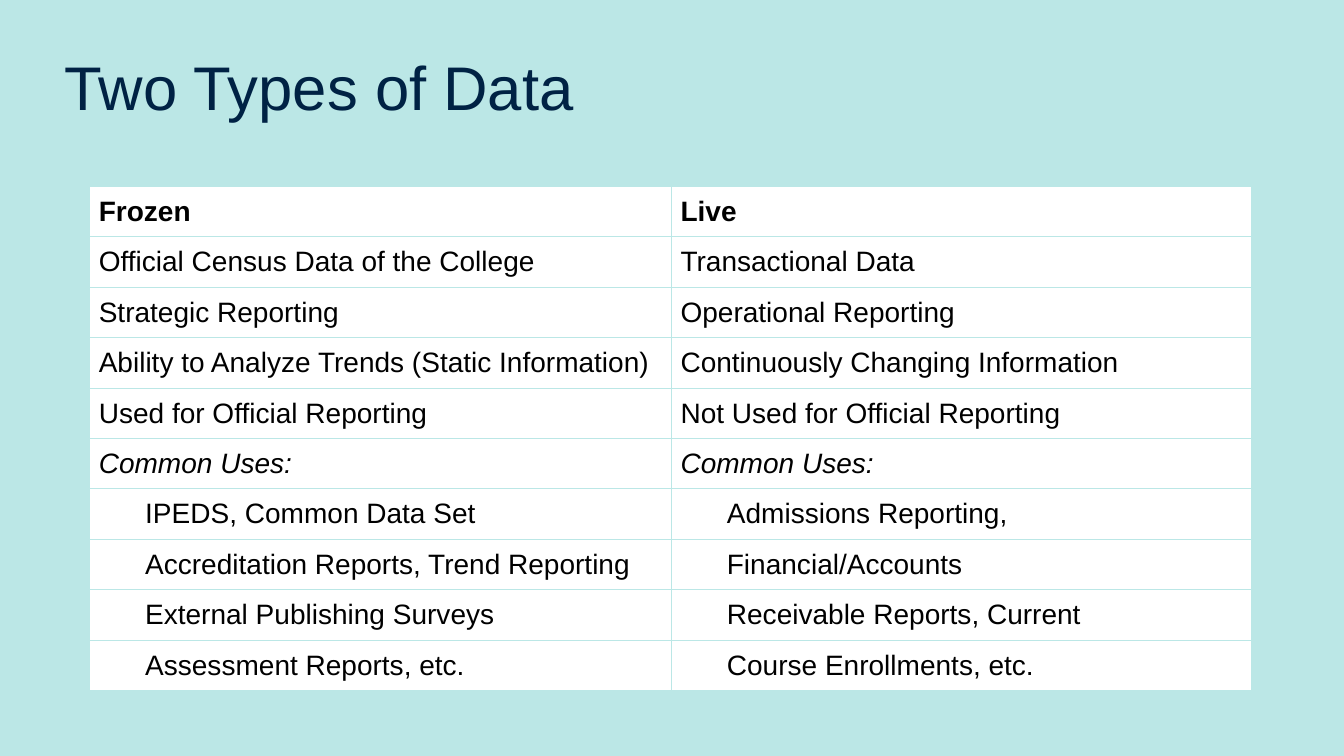
from lxml.etree import SubElement
from pptx import Presentation
from pptx.dml.color import RGBColor
from pptx.enum.text import MSO_ANCHOR, PP_ALIGN
from pptx.oxml.ns import qn
from pptx.util import Inches, Pt

FONT = "Arial"
COLORS = {"background": "BBE7E6", "title": "002244", "text": "000000", "cell": "FFFFFF"}
ROWS = [
    ("Frozen", "Live"),
    ("Official Census Data of the College", "Transactional Data"),
    ("Strategic Reporting", "Operational Reporting"),
    ("Ability to Analyze Trends (Static Information)", "Continuously Changing Information"),
    ("Used for Official Reporting", "Not Used for Official Reporting"),
    ("Common Uses:", "Common Uses:"),
    ("IPEDS, Common Data Set", "Admissions Reporting,"),
    ("Accreditation Reports, Trend Reporting", "Financial/Accounts"),
    ("External Publishing Surveys", "Receivable Reports, Current"),
    ("Assessment Reports, etc.", "Course Enrollments, etc."),
]
HEADER_ROW = 0
USES_ROW = 5


def rgb(name):
    """Return the named colour."""
    return RGBColor.from_string(COLORS[name])


def add_run(p, text, size, color, bold=False, italic=False):
    """Add one formatted run to a paragraph."""
    r = p.add_run()
    r.text = text
    r.font.name = FONT
    r.font.size = Pt(size)
    r.font.bold = bold
    r.font.italic = italic
    r.font.color.rgb = rgb(color)


def add_title(s, text, left, top, width, height):
    """Place the title placeholder in the given box."""
    sp = s.shapes.title
    sp.left, sp.top = Inches(left), Inches(top)
    sp.width, sp.height = Inches(width), Inches(height)
    tf = sp.text_frame
    tf.word_wrap = True
    tf.vertical_anchor = MSO_ANCHOR.MIDDLE
    p = tf.paragraphs[0]
    p.alignment = PP_ALIGN.LEFT
    p.line_spacing = 0.9
    add_run(p, text, 44, "title")


def style_cell(cell):
    """Give a cell its borders, fill, margins and anchor."""
    tcPr = cell._tc.get_or_add_tcPr()
    for side in ("lnL", "lnR", "lnT", "lnB"):
        ln = SubElement(tcPr, qn(f"a:{side}"), w=str(Pt(0.75)))
        fill = SubElement(ln, qn("a:solidFill"))
        SubElement(fill, qn("a:srgbClr"), val=COLORS["background"])
    cell.fill.solid()
    cell.fill.fore_color.rgb = rgb("cell")
    cell.margin_left = cell.margin_right = Inches(0.09)
    cell.margin_top = cell.margin_bottom = Inches(0.04)
    cell.vertical_anchor = MSO_ANCHOR.MIDDLE


def add_comparison(s, left, top, col_widths, row_height):
    """Add the table of frozen and live data."""
    frame = s.shapes.add_table(
        len(ROWS), len(col_widths), Inches(left), Inches(top),
        Inches(sum(col_widths)), Inches(row_height * len(ROWS)))
    table = frame.table
    table.first_row = table.horz_banding = False
    for column, width in zip(table.columns, col_widths):
        column.width = Inches(width)
    for i, texts in enumerate(ROWS):
        table.rows[i].height = Inches(row_height)
        for j, text in enumerate(texts):
            cell = table.cell(i, j)
            style_cell(cell)
            p = cell.text_frame.paragraphs[0]
            if i > USES_ROW:
                p._p.get_or_add_pPr().set("marL", str(Inches(0.46)))
            add_run(p, text, 20, "text", bold=i == HEADER_ROW, italic=i == USES_ROW)


def main():
    """Build and save the slide."""
    prs = Presentation()
    prs.slide_width, prs.slide_height = Inches(13.33), Inches(7.5)
    s = prs.slides.add_slide(prs.slide_layouts[5])
    s.background.fill.solid()
    s.background.fill.fore_color.rgb = rgb("background")
    add_title(s, "Two Types of Data", 0.54, 0.17, 11.5, 1.45)
    add_comparison(s, 0.89, 1.85, (5.77, 5.75), 0.5)
    prs.save("out.pptx")


if __name__ == "__main__":
    main()
